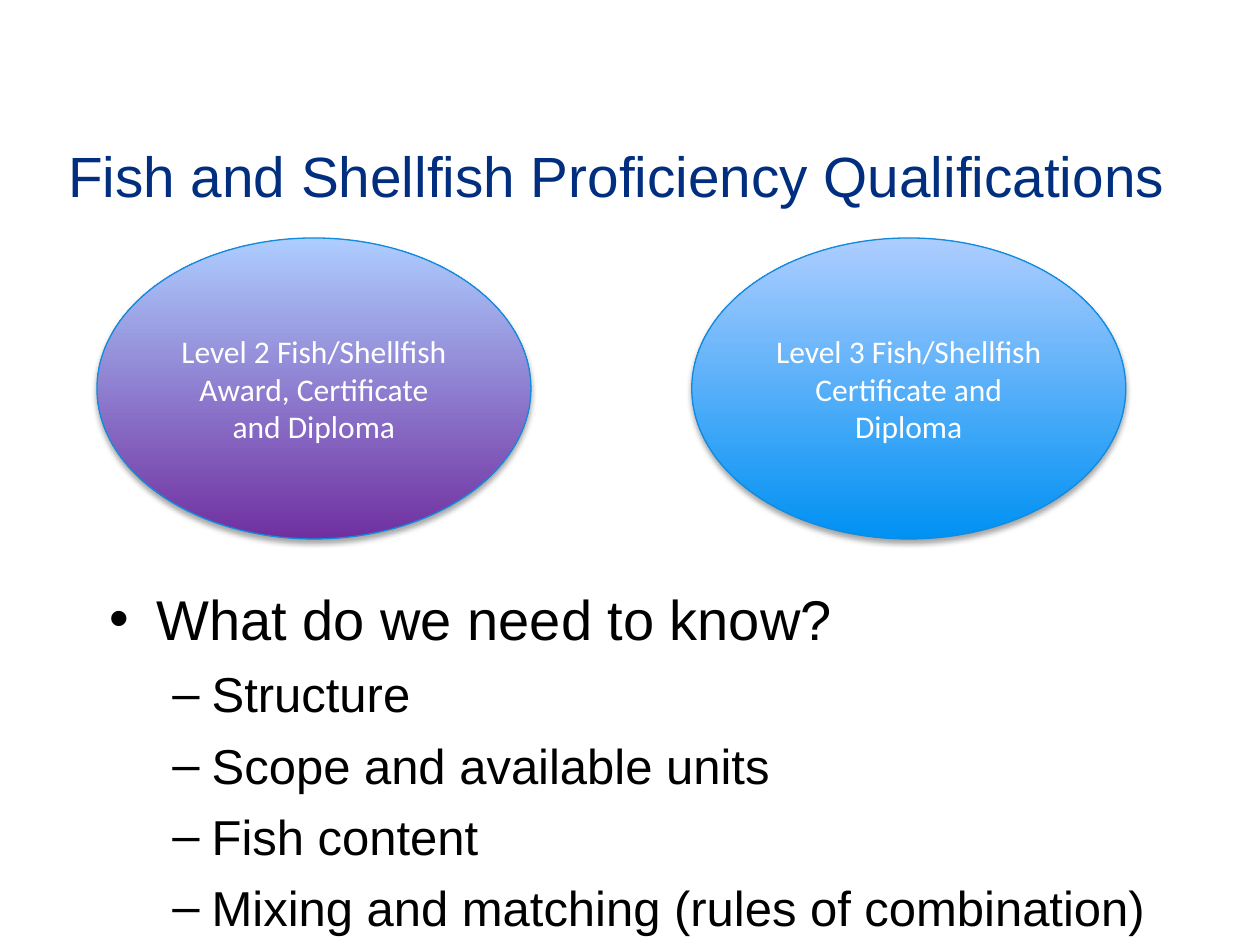
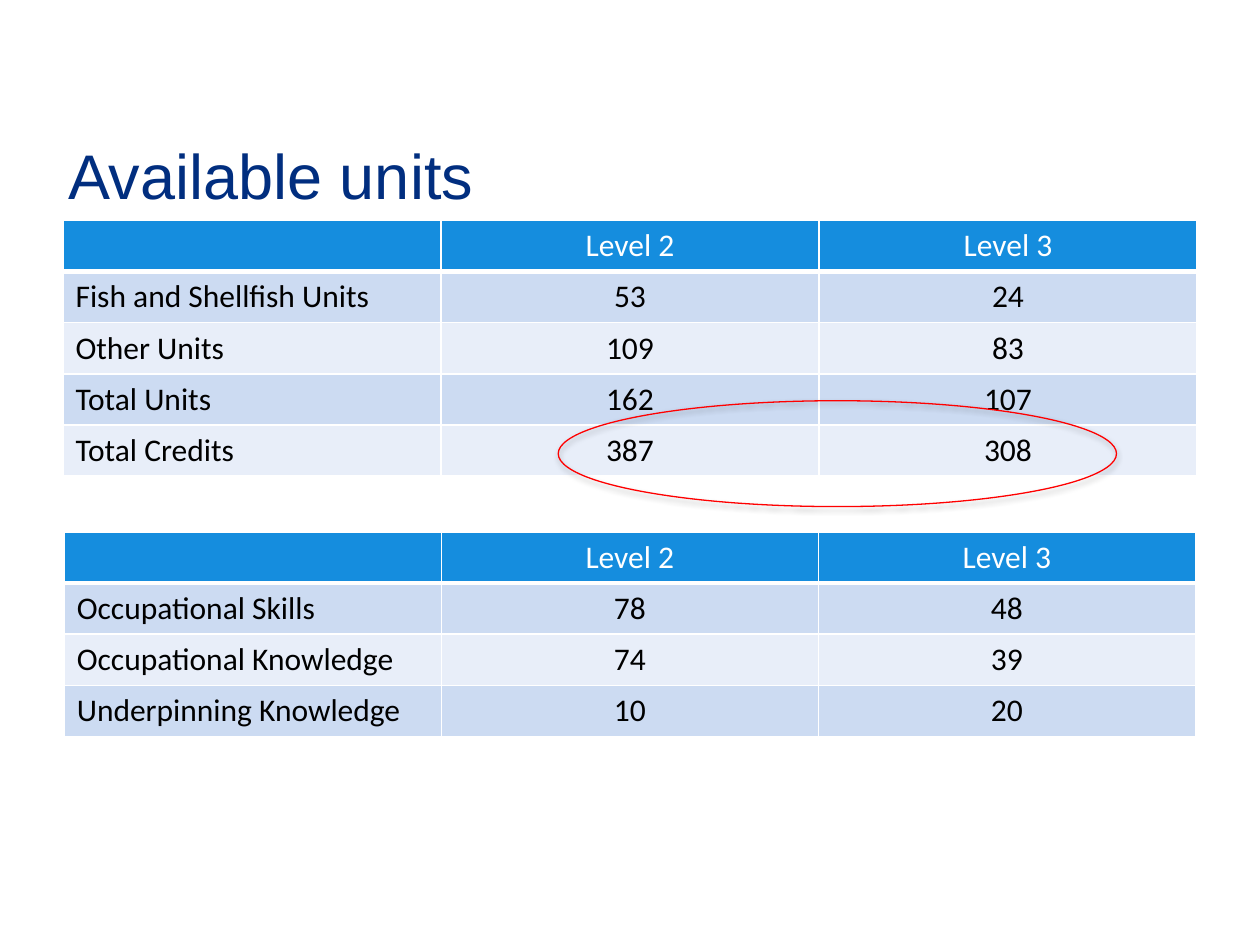
from dataclasses import dataclass
from typing import Optional

from lxml.etree import SubElement as Sub
from pptx import Presentation
from pptx.dml.color import RGBColor as Rgb
from pptx.enum.shapes import MSO_SHAPE as Kind
from pptx.enum.text import MSO_ANCHOR as Anchor, MSO_AUTO_SIZE as Fit, PP_ALIGN as Align
from pptx.oxml.ns import qn
from pptx.util import Pt


@dataclass(frozen=True)
class Theme:
    head: str = "Arial"
    body: str = "Calibri"
    navy: str = "012E7F"
    black: str = "000000"
    white: str = "FFFFFF"
    red: str = "FF0000"
    edge: str = "108BDE"
    pale: str = "ADCDFF"
    blue: str = "0091F3"
    plum: str = "7030A0"
    band: str = "158DDE"
    rows: tuple = ("CCDBF2", "E8EEF9")
    title: float = 36
    tight: float = 32.4
    points: tuple = (32, 28)
    small: float = 18


@dataclass(frozen=True)
class Box:
    left: float
    top: float
    width: float
    height: float

    def place(self) -> tuple:
        return Pt(self.left), Pt(self.top), Pt(self.width), Pt(self.height)


@dataclass(frozen=True)
class Oval:
    box: Box
    line: str
    base: Optional[str] = None
    text: str = ""


@dataclass(frozen=True)
class Grid:
    box: Box
    rows: tuple


@dataclass(frozen=True)
class Point:
    text: str
    level: int = 0


LOOK = Theme()
TITLE = Box(31.7, 54.7, 661, 90)
BULLETS = (("•", 27, -27), ("–", 58.5, -22.5))
HEADER = ("", "Level 2", "Level 3")

OVALS = (
    Oval(Box(395.3, 136, 248, 172), LOOK.edge, LOOK.blue,
         "Level 3 Fish/Shellfish Certificate and Diploma"),
    Oval(Box(55.4, 136, 248, 172), LOOK.edge, LOOK.plum,
         "Level 2 Fish/Shellfish Award, Certificate and Diploma"),
)
RING = Oval(Box(319, 229, 319, 60.5), LOOK.red)
POINTS = (
    Point("What do we need to know?"),
    Point("Structure", 1),
    Point("Scope and available units", 1),
    Point("Fish content", 1),
    Point("Mixing and matching (rules of combination)", 1),
)
GRIDS = (
    Grid(Box(36, 126, 648, 146), (
        HEADER,
        ("Fish and Shellfish Units", "53", "24"),
        ("Other Units", "109", "83"),
        ("Total Units", "162", "107"),
        ("Total Credits", "387", "308"),
    )),
    Grid(Box(36.7, 304, 646.4, 116.8), (
        HEADER,
        ("Occupational Skills", "78", "48"),
        ("Occupational Knowledge", "74", "39"),
        ("Underpinning Knowledge", "10", "20"),
    )),
)


def add_run(para, text: str, face: str, size: float, hue: str) -> None:
    run = para.add_run()
    run.text = text
    font = run.font
    font.name, font.size, font.bold = face, Pt(size), False
    font.color.rgb = Rgb.from_string(hue)


def new_slide(deck, text: str, size: float):
    slide = deck.slides.add_slide(deck.slide_layouts[5])
    title = slide.shapes.title
    title.left, title.top, title.width, title.height = TITLE.place()
    frame = title.text_frame
    frame.word_wrap = True
    frame.auto_size = Fit.NONE
    frame.vertical_anchor = Anchor.MIDDLE
    para = frame.paragraphs[0]
    para.alignment = Align.LEFT
    add_run(para, text, LOOK.head, size, LOOK.navy)
    return slide


def add_shade(shape) -> None:
    shape.shadow.inherit = False
    list_el = shape._element.spPr.find(qn("a:effectLst"))
    shade = Sub(list_el, qn("a:outerShdw"), blurRad=str(Pt(3.1)),
                dist=str(Pt(1.8)), dir="5400000", rotWithShape="0")
    hue = Sub(shade, qn("a:srgbClr"), val=LOOK.black)
    Sub(hue, qn("a:alpha"), val="35000")


def draw_oval(slide, oval: Oval) -> None:
    shape = slide.shapes.add_shape(Kind.OVAL, *oval.box.place())
    shape.line.color.rgb = Rgb.from_string(oval.line)
    shape.line.width = Pt(0.75)
    if oval.base:
        shape.fill.gradient()
        shape.fill.gradient_angle = 90
        for stop, hue in zip(shape.fill.gradient_stops, (oval.base, LOOK.pale)):
            stop.color.rgb = Rgb.from_string(hue)
    else:
        shape.fill.background()
    add_shade(shape)
    if oval.text:
        frame = shape.text_frame
        frame.word_wrap = True
        frame.vertical_anchor = Anchor.MIDDLE
        para = frame.paragraphs[0]
        para.alignment = Align.CENTER
        add_run(para, oval.text, LOOK.body, LOOK.small, LOOK.white)


def draw_points(slide, box: Box, points: tuple) -> None:
    frame = slide.shapes.add_textbox(*box.place()).text_frame
    frame.word_wrap = True
    frame.margin_top = Pt(46)
    for i, point in enumerate(points):
        para = frame.add_paragraph() if i else frame.paragraphs[0]
        mark, left, hang = BULLETS[point.level]
        para.level = point.level
        para.space_before = Pt(7 if i else 0)
        props = para._p.get_or_add_pPr()
        props.set("marL", str(Pt(left)))
        props.set("indent", str(Pt(hang)))
        Sub(props, qn("a:buFont"), typeface=LOOK.head)
        Sub(props, qn("a:buChar"), char=mark)
        add_run(para, point.text, LOOK.head, LOOK.points[point.level], LOOK.black)


def add_edges(cell, base: float) -> None:
    props = cell._tc.get_or_add_tcPr()
    for side, width in (("L", 1), ("R", 1), ("T", 1), ("B", base)):
        line = Sub(props, qn(f"a:ln{side}"), w=str(Pt(width)))
        Sub(Sub(line, qn("a:solidFill")), qn("a:srgbClr"), val=LOOK.white)


def draw_grid(slide, grid: Grid) -> None:
    count, span = len(grid.rows), len(grid.rows[0])
    table = slide.shapes.add_table(count, span, *grid.box.place()).table
    table.first_row = table.horz_banding = False
    for col in table.columns:
        col.width = Pt(grid.box.width / span)
    for i, row in enumerate(grid.rows):
        table.rows[i].height = Pt(grid.box.height / count)
        back = LOOK.rows[(i - 1) % 2] if i else LOOK.band
        for j, text in enumerate(row):
            cell = table.cell(i, j)
            add_edges(cell, 1 if i else 3)
            cell.fill.solid()
            cell.fill.fore_color.rgb = Rgb.from_string(back)
            if text:
                para = cell.text_frame.paragraphs[0]
                para.alignment = Align.CENTER if j else Align.LEFT
                add_run(para, text, LOOK.body, LOOK.small,
                        LOOK.black if i else LOOK.white)


def main() -> None:
    deck = Presentation()
    deck.slide_width, deck.slide_height = Pt(720), Pt(540)

    slide = new_slide(deck, "Fish and Shellfish Proficiency Qualifications", LOOK.tight)
    draw_points(slide, Box(55.4, 288, 624, 228), POINTS)
    for oval in OVALS:
        draw_oval(slide, oval)

    slide = new_slide(deck, "Available units", LOOK.title)
    for grid in GRIDS:
        draw_grid(slide, grid)
    draw_oval(slide, RING)

    deck.save("out.pptx")


if __name__ == "__main__":
    main()
